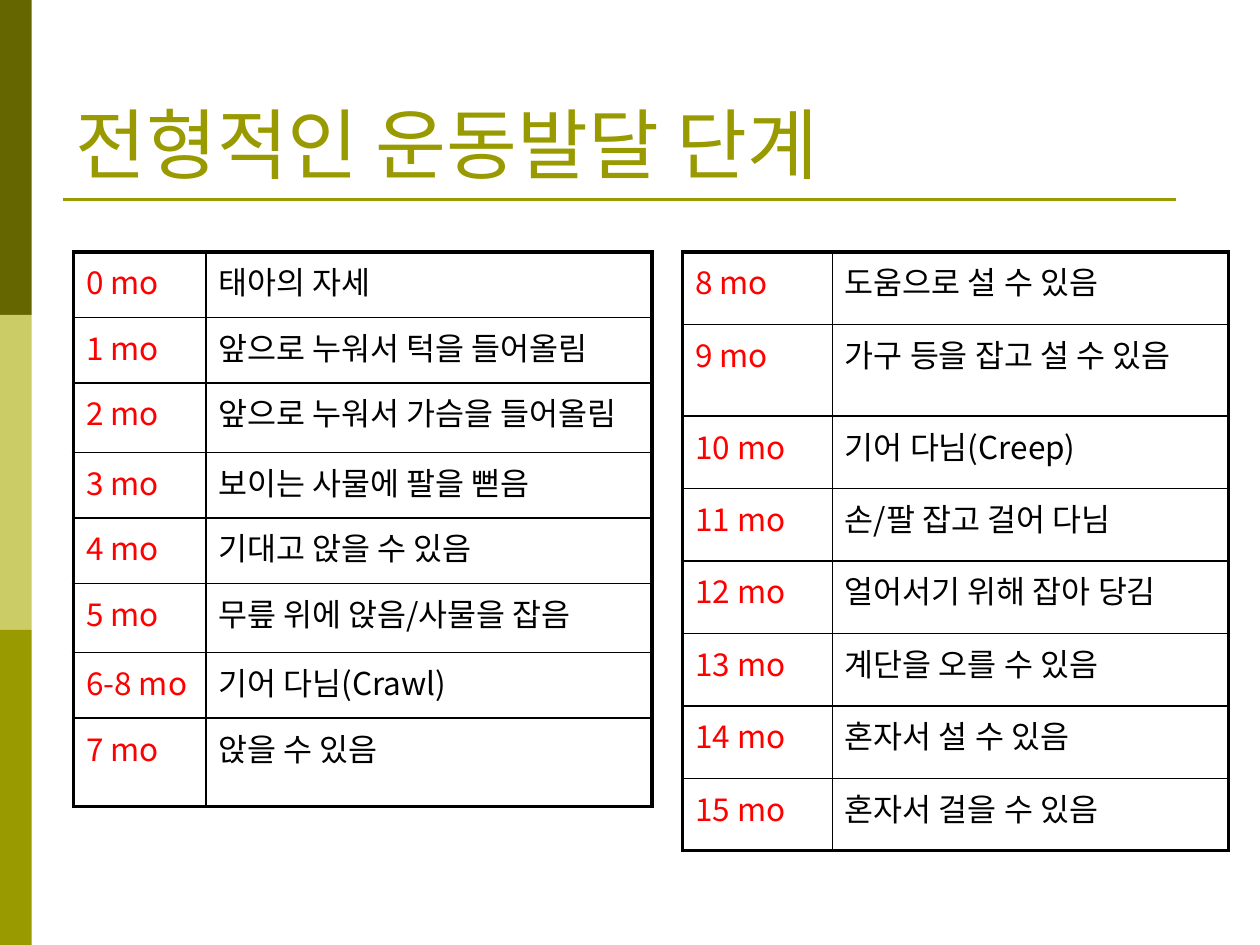
from lxml import etree
from pptx import Presentation
from pptx.dml.color import RGBColor
from pptx.enum.shapes import MSO_CONNECTOR, MSO_SHAPE
from pptx.enum.text import MSO_ANCHOR
from pptx.oxml.ns import qn
from pptx.util import Cm, Pt

RECTANGLE = MSO_SHAPE.RECTANGLE
STRAIGHT = MSO_CONNECTOR.STRAIGHT
BOTTOM = MSO_ANCHOR.BOTTOM
FONT = "Noto Sans CJK KR"
COLORS = {
    "dark": "666600",
    "light": "CCCC66",
    "olive": "999900",
    "month": "FF0000",
    "text": "000000",
    "paper": "FFFFFF",
}
THICK, THIN = 2.25, 1

EARLY_STAGES = [
    ("0 mo", "태아의 자세", 1.32),
    ("1 mo", "앞으로 누워서 턱을 들어올림", 1.32),
    ("2 mo", "앞으로 누워서 가슴을 들어올림", 1.4),
    ("3 mo", "보이는 사물에 팔을 뻗음", 1.32),
    ("4 mo", "기대고 앉을 수 있음", 1.32),
    ("5 mo", "무릎 위에 앉음/사물을 잡음", 1.4),
    ("6-8 mo", "기어 다님(Crawl)", 1.32),
    ("7 mo", "앉을 수 있음", 1.78),
]
LATER_STAGES = [
    ("8 mo", "도움으로 설 수 있음", 1.46),
    ("9 mo", "가구 등을 잡고 설 수 있음", 1.85),
    ("10 mo", "기어 다님(Creep)", 1.46),
    ("11 mo", "손/팔 잡고 걸어 다님", 1.46),
    ("12 mo", "얼어서기 위해 잡아 당김", 1.46),
    ("13 mo", "계단을 오를 수 있음", 1.46),
    ("14 mo", "혼자서 설 수 있음", 1.46),
    ("15 mo", "혼자서 걸을 수 있음", 1.46),
]


def color(name):
    """Return the named colour."""
    return RGBColor.from_string(COLORS[name])


def write(para, text, size, color_name):
    """Put styled text into a paragraph, for Latin and Korean alike."""
    para.text = text
    para.font.size = Pt(size)
    para.font.name = FONT
    para.font.color.rgb = color(color_name)
    latin = para.font._element.find(qn("a:latin"))
    east_asian = etree.Element(qn("a:ea"), typeface=FONT)
    latin.addnext(east_asian)


def add_sidebar(page, left, top, width, height):
    """Stack three equal colour bands in the given box."""
    bands = ("dark", "light", "olive")
    band_height = height / len(bands)
    for index, name in enumerate(bands):
        band = page.shapes.add_shape(
            RECTANGLE, Cm(left), Cm(top + index * band_height), Cm(width), Cm(band_height)
        )
        band.shadow.inherit = False
        band.fill.solid()
        band.fill.fore_color.rgb = color(name)
        band.line.fill.background()


def add_title(page, left, top, width, height, text):
    """Place the title at the bottom of the box with a rule below it."""
    box = page.shapes.add_textbox(Cm(left), Cm(top), Cm(width), Cm(height))
    frame = box.text_frame
    frame.word_wrap = True
    frame.vertical_anchor = BOTTOM
    write(frame.paragraphs[0], text, 44, "olive")

    rule_top = Cm(top + height + 0.08)
    rule = page.shapes.add_connector(
        STRAIGHT, Cm(left), rule_top, Cm(left + width - 0.43), rule_top
    )
    rule.line.color.rgb = color("olive")
    rule.line.width = Pt(1.5)
    etree.SubElement(rule._element.spPr, qn("a:effectLst"))


def set_borders(cell, widths):
    """Draw the cell borders with widths given by side."""
    properties = cell._tc.get_or_add_tcPr()
    for side, width in widths.items():
        line = etree.SubElement(properties, qn(f"a:ln{side}"), w=str(Pt(width)))
        fill = etree.SubElement(line, qn("a:solidFill"))
        etree.SubElement(fill, qn("a:srgbClr"), val=COLORS["text"])


def add_stage_table(page, left, top, column_widths, stages):
    """Build a table of months and stages with a thick outer frame."""
    height = sum(stage[2] for stage in stages)
    table = page.shapes.add_table(
        len(stages), 2, Cm(left), Cm(top), Cm(sum(column_widths)), Cm(height)
    ).table
    table.first_row = False
    table.horz_banding = False
    for column, width in zip(table.columns, column_widths):
        column.width = Cm(width)

    last = len(stages) - 1
    for row, (month, stage, row_height) in enumerate(stages):
        table.rows[row].height = Cm(row_height)
        for col, (text, name) in enumerate(((month, "month"), (stage, "text"))):
            cell = table.cell(row, col)
            set_borders(cell, {
                "L": THICK if col == 0 else THIN,
                "R": THICK if col == 1 else THIN,
                "T": THICK if row == 0 else THIN,
                "B": THICK if row == last else THIN,
            })
            cell.fill.solid()
            cell.fill.fore_color.rgb = color("paper")
            para = cell.text_frame.paragraphs[0]
            para.space_before = Pt(3.6)
            write(para, text, 18, name)


def main():
    """Build the slide and save it."""
    deck = Presentation()
    deck.slide_width, deck.slide_height = Cm(25.4), Cm(19.05)
    page = deck.slides.add_slide(deck.slide_layouts[6])
    add_sidebar(page, 0, 0, 0.64, 19.05)
    add_title(page, 1.27, 0.76, 22.86, 3.18, "전형적인 운동발달 단계")
    add_stage_table(page, 1.48, 5.08, (2.67, 8.99), EARLY_STAGES)
    add_stage_table(page, 13.76, 5.08, (3.02, 7.98), LATER_STAGES)
    deck.save("out.pptx")


if __name__ == "__main__":
    main()
